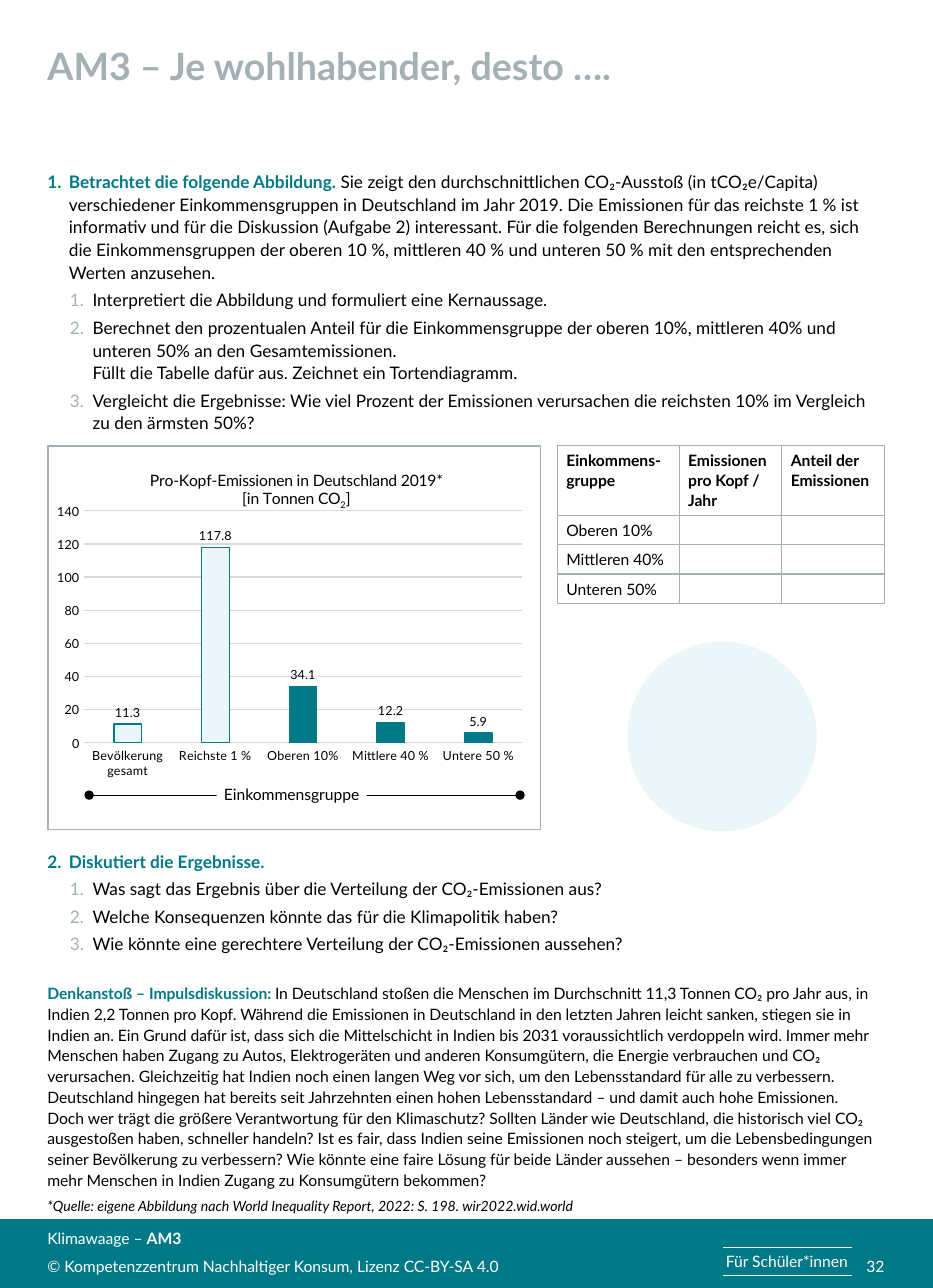
from lxml.etree import SubElement
from pptx import Presentation
from pptx.chart.data import CategoryChartData
from pptx.dml.color import RGBColor
from pptx.enum.chart import XL_CHART_TYPE as ChartType, XL_LABEL_POSITION as LabelPosition, XL_TICK_MARK as Tick
from pptx.enum.shapes import MSO_CONNECTOR as Connector, MSO_SHAPE as Shape
from pptx.enum.text import MSO_ANCHOR as Anchor, MSO_AUTO_SIZE as AutoSize, PP_ALIGN as Align
from pptx.oxml import parse_xml
from pptx.oxml.ns import nsdecls, qn
from pptx.util import Inches, Pt

COLORS = {"teal": "007987", "pale": "EBF6F8", "grey": "A3B1B5", "grid": "D9D9D9", "black": "000000", "white": "FFFFFF"}
FONT = "Lato"
LEFT, WIDTH = 0.42, 7.42

TITLE = "AM3 – Je wohlhabender, desto …."
TASKS = [
    {"head": "Betrachtet die folgende Abbildung. ",
     "text": "Sie zeigt den durchschnittlichen CO₂-Ausstoß (in tCO₂e/Capita) verschiedener Einkommensgruppen in Deutschland im Jahr 2019. Die Emissionen für das reichste 1 % ist informativ und für die Diskussion (Aufgabe 2) interessant. Für die folgenden Berechnungen reicht es, sich die Einkommensgruppen der oberen 10 %, mittleren 40 % und unteren 50 % mit den entsprechenden Werten anzusehen.",
     "steps": [
         "Interpretiert die Abbildung und formuliert eine Kernaussage.",
         "Berechnet den prozentualen Anteil für die Einkommensgruppe der oberen 10%, mittleren 40% und unteren 50% an den Gesamtemissionen.\nFüllt die Tabelle dafür aus. Zeichnet ein Tortendiagramm.",
         "Vergleicht die Ergebnisse: Wie viel Prozent der Emissionen verursachen die reichsten 10% im Vergleich zu den ärmsten 50%?"]},
    {"head": "Diskutiert die Ergebnisse.",
     "text": "",
     "steps": [
         "Was sagt das Ergebnis über die Verteilung der CO₂-Emissionen aus?",
         "Welche Konsequenzen könnte das für die Klimapolitik haben?",
         "Wie könnte eine gerechtere Verteilung der CO₂-Emissionen aussehen?"]},
]
IMPULSE_HEAD = "Denkanstoß – Impulsdiskussion: "
IMPULSE = [
    "In Deutschland stoßen die Menschen im Durchschnitt 11,3 Tonnen CO₂ pro Jahr aus, in Indien 2,2 Tonnen pro Kopf. Während die Emissionen in Deutschland in den letzten Jahren leicht sanken, stiegen sie in Indien an. Ein Grund dafür ist, dass sich die Mittelschicht in Indien bis 2031 voraussichtlich verdoppeln wird.",
    "Immer mehr Menschen haben Zugang zu Autos, Elektrogeräten und anderen Konsumgütern, die Energie verbrauchen und CO₂ verursachen. Gleichzeitig hat Indien noch einen langen Weg vor sich, um den Lebensstandard für alle zu verbessern. Deutschland hingegen hat bereits seit Jahrzehnten einen hohen Lebensstandard – und damit auch hohe Emissionen.",
    "Doch wer trägt die größere Verantwortung für den Klimaschutz? Sollten Länder wie Deutschland, die historisch viel CO₂ ausgestoßen haben, schneller handeln? Ist es fair, dass Indien seine Emissionen noch steigert, um die Lebensbedingungen seiner Bevölkerung zu verbessern? Wie könnte eine faire Lösung für beide Länder aussehen – besonders wenn immer mehr Menschen in Indien Zugang zu Konsumgütern bekommen?",
]
SOURCE = "*Quelle: eigene Abbildung nach World Inequality Report, 2022: S. 198. wir2022.wid.world"
CHART_TITLE = [["Pro-Kopf-Emissionen in Deutschland 2019*"], ["[in Tonnen CO", "2", "]"]]
EMISSIONS = [
    ("Bevölkerung gesamt", 11.3, "pale"),
    ("Reichste 1 %", 117.8, "pale"),
    ("Oberen 10%", 34.1, "teal"),
    ("Mittlere 40 %", 12.2, "teal"),
    ("Untere 50 %", 5.9, "teal"),
]
TABLE = [
    ("Einkommens-gruppe", "Emissionen pro Kopf / Jahr", "Anteil der Emissionen"),
    ("Oberen 10%", "", ""),
    ("Mittleren 40%", "", ""),
    ("Unteren 50%", "", ""),
]
COLUMN_WIDTHS = [1.08, 0.91, 0.91]
ROW_HEIGHTS = [0.62, 0.26, 0.26, 0.26]


def rgb(name):
    return RGBColor.from_string(COLORS[name])


def inches(*lengths):
    return [Inches(length) for length in lengths]


def style(font, size, color="black", bold=False, italic=False):
    font.name, font.size, font.bold, font.italic = FONT, Pt(size), bold, italic
    font.color.rgb = rgb(color)


def write(para, text, size, color="black", bold=False, italic=False):
    for number, line in enumerate(text.split("\n")):
        if number:
            para.add_line_break()
        span = para.add_run()
        span.text = line
        style(span.font, size, color, bold, italic)
    return span


def space(para, after=0, line=1.0):
    para.space_before, para.space_after, para.line_spacing = Pt(0), Pt(after), line


def prepare(shape, anchor=Anchor.TOP, right=0):
    frame = shape.text_frame
    frame.auto_size, frame.word_wrap, frame.vertical_anchor = AutoSize.NONE, True, anchor
    frame.margin_left = frame.margin_top = frame.margin_bottom = 0
    frame.margin_right = Inches(right)
    return frame


def place(shape, *bounds):
    shape.left, shape.top, shape.width, shape.height = inches(*bounds)
    return shape


def add_text(bounds, anchor=Anchor.TOP, right=0):
    return prepare(slide.shapes.add_textbox(*inches(*bounds)), anchor, right)


def add_block(kind, bounds, color):
    block = slide.shapes.add_shape(kind, *inches(*bounds))
    block.shadow.inherit = False
    block.fill.solid()
    block.fill.fore_color.rgb = rgb(color)
    block.line.fill.background()
    return block


def add_line(start, end, color, width, dots=False):
    line = slide.shapes.add_connector(Connector.STRAIGHT, *inches(*start, *end))
    line.line.color.rgb, line.line.width = rgb(color), Pt(width)
    if dots:
        for tag in ("a:headEnd", "a:tailEnd"):
            SubElement(line.line._ln, qn(tag), type="oval")
    SubElement(line._element.spPr, qn("a:effectLst"))


def number_para(para, level, start=1):
    para.level = level
    space(para, 3, 1.1)
    props = para._p.get_or_add_pPr()
    margin, hang = [(0.19, 0.19), (0.4, 0.2)][level]
    props.set("marL", str(Inches(margin)))
    props.set("indent", str(-Inches(hang)))
    color = SubElement(props, qn("a:buClr"))
    SubElement(color, qn("a:srgbClr"), val=COLORS[["teal", "grey"][level]])
    SubElement(props, qn("a:buFont"), typeface=FONT)
    SubElement(props, qn("a:buAutoNum"), type="arabicPeriod", startAt=str(start))


def fill_task(frame, task, number):
    para = frame.paragraphs[0]
    number_para(para, 0, number)
    write(para, task["head"], 11, "teal", True)
    if task["text"]:
        write(para, task["text"], 11)
    for step in task["steps"]:
        para = frame.add_paragraph()
        number_para(para, 1)
        write(para, step, 11)


def set_layout(parent, index, **values):
    old = parent.find(qn("c:layout"))
    if old is not None:
        parent.remove(old)
    items = "".join(f'<c:{tag} val="{value}"/>' for tag, value in values.items())
    parent.insert(index, parse_xml(f'<c:layout {nsdecls("c")}><c:manualLayout>{items}</c:manualLayout></c:layout>'))


def add_emissions_chart(bounds):
    data = CategoryChartData()
    data.categories = [name for name, _, _ in EMISSIONS]
    data.add_series("Series 1", [value for _, value, _ in EMISSIONS])
    chart = slide.shapes.add_chart(ChartType.COLUMN_CLUSTERED, *inches(*bounds), data).chart
    style(chart.font, 8)
    chart.has_legend, chart.has_title = False, True
    frame = chart.chart_title.text_frame
    for number, parts in enumerate(CHART_TITLE):
        para = frame.add_paragraph() if number else frame.paragraphs[0]
        for part in parts:
            span = write(para, part, 10)
            if part == "2":
                span._r.get_or_add_rPr().set("baseline", "-25000")
    set_layout(chart.chart_title._element, 1, xMode="edge", yMode="edge", x=0.2, y=0.05)
    set_layout(chart._chartSpace.chart.plotArea, 0, layoutTarget="inner", xMode="edge", yMode="edge",
               x=0.073, y=0.169, w=0.889, h=0.605)
    chart._chartSpace.chart.addnext(parse_xml(
        f'<c:spPr {nsdecls("c", "a")}><a:solidFill><a:srgbClr val="{COLORS["white"]}"/></a:solidFill>'
        f'<a:ln w="{Pt(0.75)}"><a:solidFill><a:srgbClr val="{COLORS["grey"]}"/></a:solidFill></a:ln></c:spPr>'))
    groups, values = chart.category_axis, chart.value_axis
    for axis in (groups, values):
        axis.major_tick_mark = axis.minor_tick_mark = Tick.NONE
        style(axis.tick_labels.font, 8)
    values.minimum_scale, values.maximum_scale, values.major_unit = 0, 140, 20
    values.format.line.fill.background()
    for line in (groups.format.line, values.major_gridlines.format.line):
        line.color.rgb, line.width = rgb("grid"), Pt(0.75)
    plot = chart.plots[0]
    plot.gap_width, plot.overlap, plot.vary_by_categories = 219, -27, False
    series = plot.series[0]
    bars = [(series, "pale")] + [(series.points[i], color) for i, (_, _, color) in enumerate(EMISSIONS)]
    for bar, color in bars:
        bar.format.fill.solid()
        bar.format.fill.fore_color.rgb = rgb(color)
        bar.format.line.color.rgb, bar.format.line.width = rgb("teal"), Pt(0.75)
    labels = series.data_labels
    labels.show_value, labels.position = True, LabelPosition.OUTSIDE_END
    style(labels.font, 8)


def add_share_table(left, top):
    bounds = inches(left, top, sum(COLUMN_WIDTHS), sum(ROW_HEIGHTS))
    table = slide.shapes.add_table(len(TABLE), len(COLUMN_WIDTHS), *bounds).table
    table.first_row = table.horz_banding = False
    for column, width in zip(table.columns, COLUMN_WIDTHS):
        column.width = Inches(width)
    for r, texts in enumerate(TABLE):
        table.rows[r].height = Inches(ROW_HEIGHTS[r])
        for c, text in enumerate(texts):
            cell = table.cell(r, c)
            cell.margin_left = cell.margin_right = Inches(0.08)
            cell.margin_top = cell.margin_bottom = Inches(0.04)
            props = cell._tc.get_or_add_tcPr()
            for side in ("lnL", "lnR", "lnT", "lnB"):
                border = SubElement(props, qn(f"a:{side}"), w=str(Pt(0.75)))
                SubElement(SubElement(border, qn("a:solidFill")), qn("a:srgbClr"), val=COLORS["grey"])
            cell.fill.background()
            para = cell.text_frame.paragraphs[0]
            space(para, 8, 1.07)
            if text:
                write(para, text, 10, bold=r == 0)
            else:
                SubElement(para._p, qn("a:endParaRPr"), sz="1000")


deck = Presentation()
deck.slide_width, deck.slide_height = inches(8.27, 11.42)
slide = deck.slides.add_slide(deck.slide_layouts[1])
title, body = slide.placeholders[0], slide.placeholders[1]

add_block(Shape.RECTANGLE, (0, 10.81, 8.27, 0.61), "teal")
para = prepare(place(title, LEFT, 0.38, WIDTH, 0.97)).paragraphs[0]
para.alignment = Align.LEFT
write(para, TITLE, 24, "grey", True)

fill_task(prepare(place(body, LEFT, 1.5, WIDTH, 2.4), right=0.1), TASKS[0], 1)
fill_task(add_text((LEFT, 7.53, WIDTH, 1.05), right=0.1), TASKS[1], 2)
para = add_text((LEFT, 8.71, WIDTH, 1.85), right=0.1).paragraphs[0]
space(para, line=1.1)
write(para, IMPULSE_HEAD, 10, "teal", True)
write(para, " ".join(IMPULSE), 10)
write(add_text((LEFT, 10.53, 7.26, 0.32), Anchor.MIDDLE).paragraphs[0], SOURCE, 9, italic=True)

add_emissions_chart((LEFT, 3.95, 4.38, 3.41))
add_line((0.79, 7.05), (4.61, 7.05), "black", 0.5, dots=True)
para = prepare(add_block(Shape.RECTANGLE, (1.92, 6.87, 1.33, 0.35), "white"), Anchor.MIDDLE).paragraphs[0]
para.alignment = Align.CENTER
write(para, "Einkommensgruppe", 10)
add_share_table(4.94, 3.95)
add_block(Shape.OVAL, (5.56, 5.69, 1.68, 1.68), "pale")

footer = add_text((LEFT, 10.81, 6.08, 0.5), Anchor.BOTTOM)
para = footer.paragraphs[0]
space(para, 6)
write(para, "Klimawaage – ", 10, "white")
write(para, "AM3", 10, "white", True)
write(footer.add_paragraph(), "© Kompetenzzentrum Nachhaltiger Konsum, Lizenz CC-BY-SA 4.0", 10, "white")
for text, bounds, anchor, align in [
    ("32", (6.69, 10.81, 1.15, 0.5), Anchor.BOTTOM, Align.RIGHT),
    ("Für Schüler*innen", (6.31, 11.06, 1.33, 0.25), Anchor.MIDDLE, Align.CENTER),
]:
    para = add_text(bounds, anchor).paragraphs[0]
    para.alignment = align
    write(para, text, 10, "white")
for y in (11.06, 11.31):
    add_line((6.41, y), (7.55, y), "white", 0.75)

deck.save("out.pptx")
